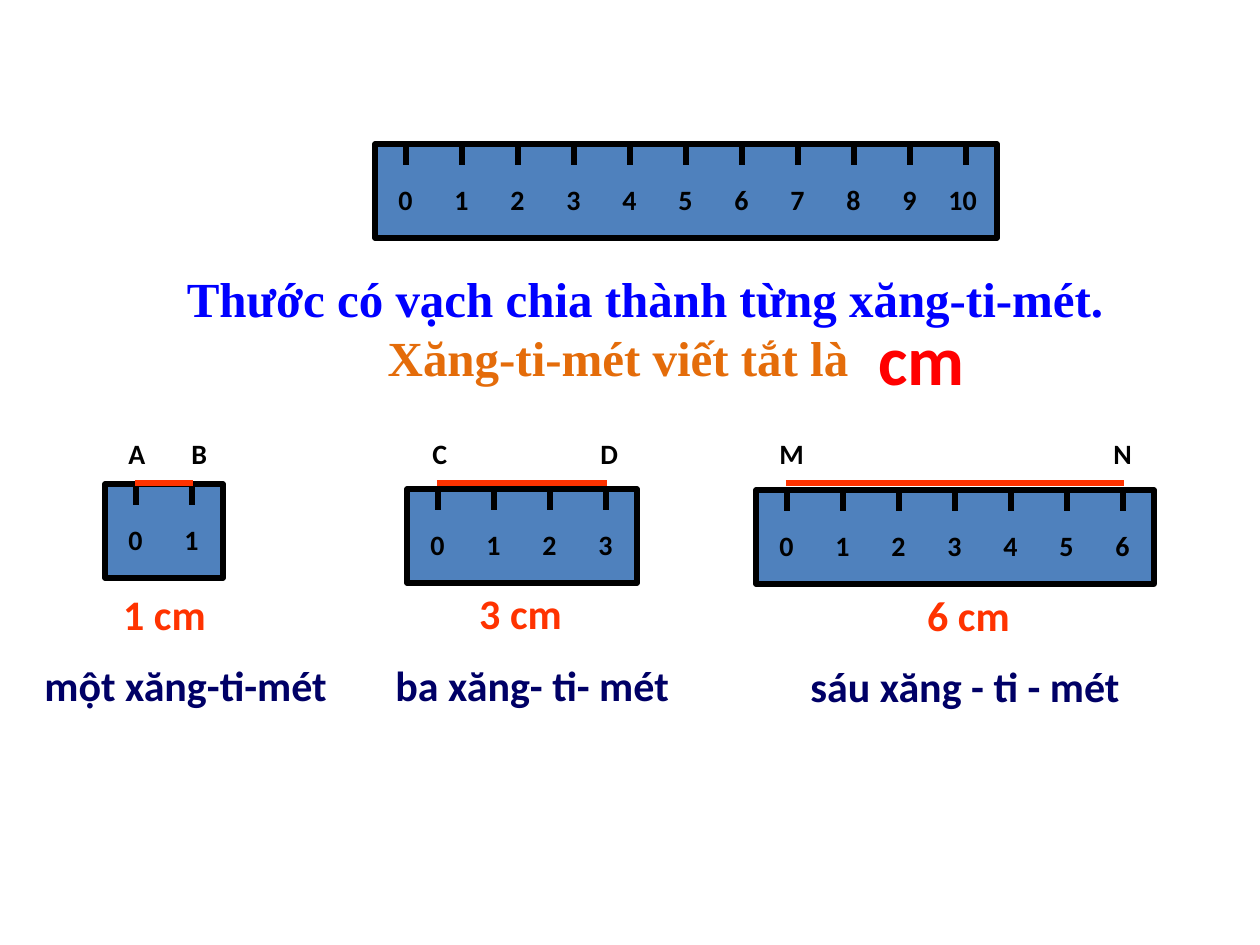
"""Build a slide that introduces the centimetre with rulers and measured segments."""
from dataclasses import dataclass

from lxml.etree import SubElement
from pptx import Presentation
from pptx.dml.color import RGBColor
from pptx.enum.shapes import MSO_CONNECTOR, MSO_SHAPE
from pptx.enum.text import MSO_ANCHOR, MSO_AUTO_SIZE, PP_ALIGN
from pptx.oxml.ns import qn
from pptx.shapes.connector import Connector
from pptx.shapes.shapetree import _BaseGroupShapes as Shapes
from pptx.util import Emu, Pt


@dataclass(frozen=True)
class Style:
    size: int
    color: str
    font: str = "Calibri"


@dataclass(frozen=True)
class Theme:
    ruler_fill: str = "4F81BD"
    ink: str = "000000"
    segment: str = "FF3300"
    line_width: int = 3
    label: Style = Style(16, "000000")
    length: Style = Style(24, "FF3300")
    words: Style = Style(24, "000066")
    statement: Style = Style(28, "0000FF", "Times New Roman")
    abbreviation: Style = Style(28, "E46C0A", "Times New Roman")
    symbol: Style = Style(40, "FF0000")


@dataclass(frozen=True)
class Box:
    left: int
    top: int
    width: int
    height: int


@dataclass(frozen=True)
class Ruler:
    left: int
    top: int
    units: int

    @property
    def width(self) -> int:
        return 2 * MARGIN + self.units * UNIT

    def mark_x(self, mark: int) -> int:
        return self.left + MARGIN + mark * UNIT


@dataclass(frozen=True)
class Example:
    ruler: Ruler
    start: str
    start_left: int
    end: str
    end_left: int
    length_box: Box
    words: str
    words_box: Box


THEME = Theme()
PX = 914400 / 126
UNIT, MARGIN = 56, 31
RULER_HEIGHT, TICK_HEIGHT = 94, 21
NUMBER_DROP, LABEL_HEIGHT = 32, 47
SEGMENT_Y, ENDPOINT_TOP, ENDPOINT_WIDTH = 483, 430, 53

EXAMPLES = (
    Example(Ruler(105, 484, 1), "A", 116, "B", 179, Box(97, 582, 135, 63),
            "một xăng-ti-mét", Box(32, 653, 315, 63)),
    Example(Ruler(407, 489, 3), "C", 420, "D", 588, Box(447, 581, 147, 63),
            "ba xăng- ti- mét", Box(383, 653, 306, 63)),
    Example(Ruler(756, 490, 6), "M", 767, "N", 1101, Box(895, 583, 147, 63),
            "sáu xăng - ti - mét", Box(798, 654, 347, 63)),
)


def px(length: int) -> Emu:
    """Turn px into EMU."""
    return Emu(round(length * PX))


def add_text(shapes: Shapes, text: str, box: Box, style: Style,
             align: PP_ALIGN = PP_ALIGN.LEFT, fixed: bool = False) -> None:
    """Add a bold one-line text box, either fitted or fixed and centred vertically."""
    shape = shapes.add_textbox(px(box.left), px(box.top), px(box.width), px(box.height))
    frame = shape.text_frame
    frame.word_wrap = True
    frame.auto_size = MSO_AUTO_SIZE.NONE if fixed else MSO_AUTO_SIZE.SHAPE_TO_FIT_TEXT
    frame.vertical_anchor = MSO_ANCHOR.MIDDLE if fixed else MSO_ANCHOR.TOP
    paragraph = frame.paragraphs[0]
    paragraph.text = text
    paragraph.alignment = align
    paragraph.font.name = style.font
    paragraph.font.size = Pt(style.size)
    paragraph.font.bold = True
    paragraph.font.color.rgb = RGBColor.from_string(style.color)


def add_line(shapes: Shapes, x1: int, y1: int, x2: int, y2: int, color: str) -> Connector:
    """Add a straight line without a shadow."""
    line = shapes.add_connector(MSO_CONNECTOR.STRAIGHT, px(x1), px(y1), px(x2), px(y2))
    line.line.color.rgb = RGBColor.from_string(color)
    line.line.width = Pt(THEME.line_width)
    SubElement(line._element.spPr, qn("a:effectLst"))
    return line


def add_ruler(shapes: Shapes, ruler: Ruler) -> None:
    """Add a grouped ruler with a tick and a number at each unit."""
    parts = shapes.add_group_shape().shapes
    body = parts.add_shape(MSO_SHAPE.RECTANGLE, px(ruler.left), px(ruler.top),
                           px(ruler.width), px(RULER_HEIGHT))
    body.shadow.inherit = False
    body.fill.solid()
    body.fill.fore_color.rgb = RGBColor.from_string(THEME.ruler_fill)
    body.line.color.rgb = RGBColor.from_string(THEME.ink)
    body.line.width = Pt(THEME.line_width)
    for mark in range(ruler.units + 1):
        x = ruler.mark_x(mark)
        tick = add_line(parts, x, ruler.top, x, ruler.top + TICK_HEIGHT, THEME.ink)
        if 2 * mark == ruler.units:
            tick.begin_connect(body, 0)
        digits = len(str(mark))
        number_box = Box(x - 10 - 10 * digits, ruler.top + NUMBER_DROP,
                         10 + 29 * digits, LABEL_HEIGHT)
        add_text(parts, str(mark), number_box, THEME.label)


def add_example(shapes: Shapes, example: Example) -> None:
    """Add a measured segment with its ruler, end points and length."""
    ruler = example.ruler
    add_ruler(shapes, ruler)
    add_line(shapes, ruler.mark_x(0) - 1, SEGMENT_Y,
             ruler.mark_x(ruler.units) + 1, SEGMENT_Y, THEME.segment)
    for name, left in ((example.start, example.start_left), (example.end, example.end_left)):
        add_text(shapes, name, Box(left, ENDPOINT_TOP, ENDPOINT_WIDTH, LABEL_HEIGHT), THEME.label)
    add_text(shapes, f"{ruler.units} cm", example.length_box, THEME.length, PP_ALIGN.CENTER)
    add_text(shapes, example.words, example.words_box, THEME.words)


def main() -> None:
    """Build and save the presentation."""
    presentation = Presentation()
    presentation.slide_width, presentation.slide_height = px(1260), px(945)
    shapes = presentation.slides.add_slide(presentation.slide_layouts[6]).shapes
    add_ruler(shapes, Ruler(375, 144, 10))
    for example in EXAMPLES:
        add_example(shapes, example)
    add_text(shapes, "Thước có vạch chia thành từng xăng-ti-mét.",
             Box(136, 262, 1018, 72), THEME.statement, PP_ALIGN.CENTER)
    add_text(shapes, "Xăng-ti-mét viết tắt là",
             Box(109, 321, 1018, 72), THEME.abbreviation, PP_ALIGN.CENTER)
    add_text(shapes, "cm", Box(827, 331, 189, 53), THEME.symbol, PP_ALIGN.CENTER, fixed=True)
    presentation.save("out.pptx")


if __name__ == "__main__":
    main()
